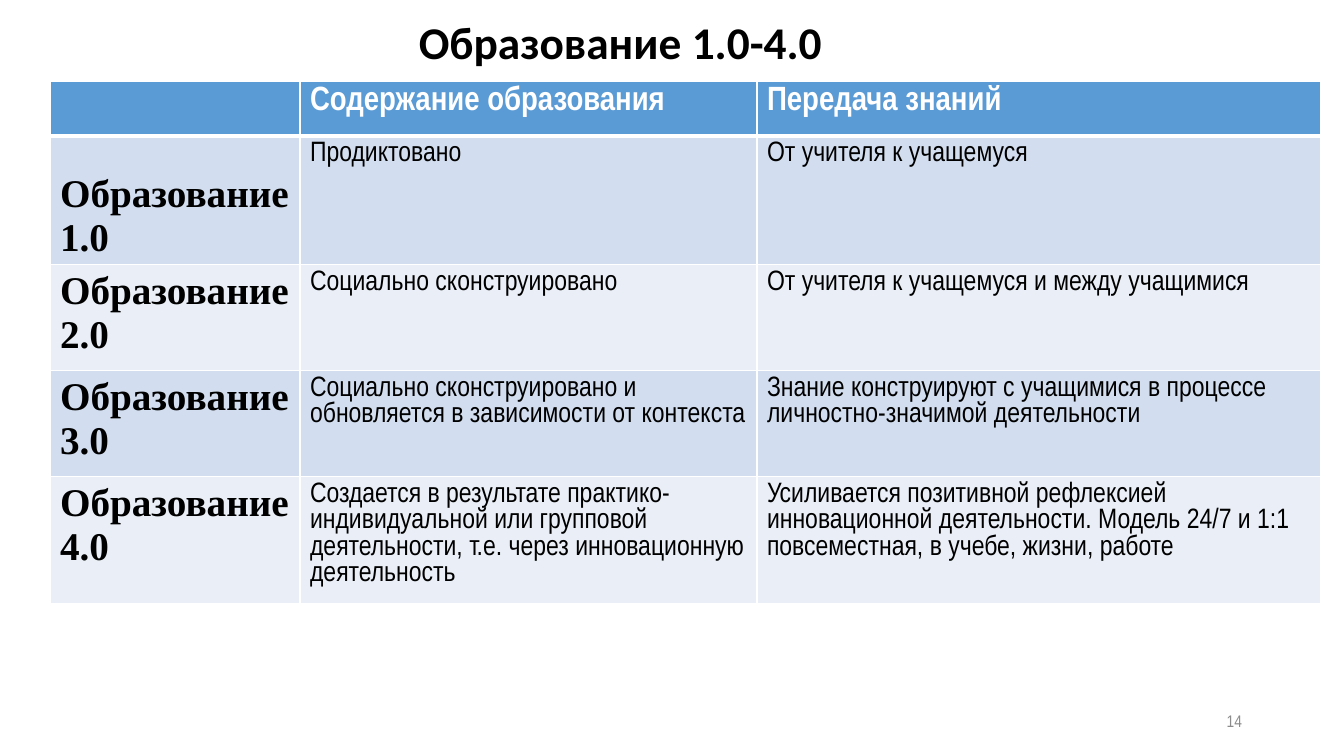
"""Build the slide comparing Education 1.0 to 4.0."""
import pptx
import pptx.dml.color
import pptx.enum.text
import pptx.oxml
import pptx.oxml.ns
import pptx.util

TITLE = "Образование 1.0-4.0"
PAGE_NUMBER = "14"
ROWS = [
    ("", "Содержание образования", "Передача знаний"),
    ("Образование 1.0", "Продиктовано", "От учителя к учащемуся"),
    ("Образование 2.0", "Социально сконструировано",
     "От учителя к учащемуся и между учащимися"),
    ("Образование 3.0",
     "Социально сконструировано и обновляется в зависимости от контекста",
     "Знание конструируют с учащимися в процессе личностно-значимой деятельности"),
    ("Образование 4.0",
     "Создается в результате практико- индивидуальной или групповой "
     "деятельности, т.е. через инновационную деятельность",
     "Усиливается позитивной рефлексией инновационной деятельности. "
     "Модель 24/7 и 1:1 повсеместная, в учебе, жизни, работе"),
]
COLORS = {"header": "5B9BD5", "odd": "D2DEEF", "even": "EAEFF7",
          "white": "FFFFFF", "black": "000000", "number": "8C8C8C"}
COLUMN_WIDTHS = [250, 457, 564]
ROW_HEIGHTS = [55, 128, 106, 106, 127]
TABLE_LEFT, TABLE_TOP = 50, 81
FIRST_LABEL_MARGIN = 37


def px(length):
    return pptx.util.Emu(round(length * 12192000 / 1344))


def rgb(name):
    return pptx.dml.color.RGBColor.from_string(COLORS[name])


def format_text(text_frame, font_name, size, color, bold=False):
    for paragraph in text_frame.paragraphs:
        for run in paragraph.runs:
            run.font.name = font_name
            run.font.size = pptx.util.Pt(size)
            run.font.bold = bold
            run.font.color.rgb = rgb(color)


def set_borders(cell, bottom_width):
    properties = cell._tc.get_or_add_tcPr()
    widths = {"lnL": 1, "lnR": 1, "lnT": 1, "lnB": bottom_width}
    for position, (side, width) in enumerate(widths.items()):
        properties.insert(position, pptx.oxml.parse_xml(
            f'<a:{side} {pptx.oxml.ns.nsdecls("a")} w="{pptx.util.Pt(width)}">'
            f'<a:solidFill><a:srgbClr val="{COLORS["white"]}"/></a:solidFill></a:{side}>'))


def add_title(slide):
    title = slide.shapes.title
    title.left, title.top, title.width, title.height = px(46), px(0), px(1160), px(73)
    text_frame = title.text_frame
    text_frame.text = TITLE
    text_frame.auto_size = pptx.enum.text.MSO_AUTO_SIZE.NONE
    text_frame.vertical_anchor = pptx.enum.text.MSO_ANCHOR.MIDDLE
    text_frame.margin_top, text_frame.margin_right = px(22), px(21)
    text_frame.paragraphs[0].alignment = pptx.enum.text.PP_ALIGN.CENTER
    text_frame.paragraphs[0].line_spacing = 0.9
    format_text(text_frame, "Calibri", 32.4, "black", True)


def add_education_table(slide):
    table = slide.shapes.add_table(
        len(ROWS), len(COLUMN_WIDTHS), px(TABLE_LEFT), px(TABLE_TOP),
        px(sum(COLUMN_WIDTHS)), px(sum(ROW_HEIGHTS))).table
    for column, width in zip(table.columns, COLUMN_WIDTHS):
        column.width = px(width)
    for row_index, (row, height) in enumerate(zip(table.rows, ROW_HEIGHTS)):
        row.height = px(height)
        is_header = row_index == 0
        fill = "header" if is_header else "odd" if row_index % 2 else "even"
        for column_index, cell in enumerate(row.cells):
            cell.text_frame.text = ROWS[row_index][column_index]
            cell.fill.solid()
            cell.fill.fore_color.rgb = rgb(fill)
            set_borders(cell, 3 if is_header else 1)
            if is_header:
                format_text(cell.text_frame, "Arial Narrow", 24, "white", True)
            elif column_index == 0:
                format_text(cell.text_frame, "Times New Roman", 28, "black", True)
            else:
                format_text(cell.text_frame, "Arial Narrow", 20, "black")
    table.cell(1, 0).margin_top = px(FIRST_LABEL_MARGIN)


def add_page_number(slide):
    text_frame = slide.shapes.add_textbox(px(950), px(701), px(302), px(40)).text_frame
    text_frame.text = PAGE_NUMBER
    text_frame.word_wrap = True
    text_frame.vertical_anchor = pptx.enum.text.MSO_ANCHOR.MIDDLE
    text_frame.paragraphs[0].alignment = pptx.enum.text.PP_ALIGN.RIGHT
    format_text(text_frame, "Arial Narrow", 12, "number")


def main():
    presentation = pptx.Presentation()
    presentation.slide_width, presentation.slide_height = px(1344), px(756)
    slide = presentation.slides.add_slide(presentation.slide_layouts[5])
    add_title(slide)
    add_education_table(slide)
    add_page_number(slide)
    presentation.save("out.pptx")


if __name__ == "__main__":
    main()
